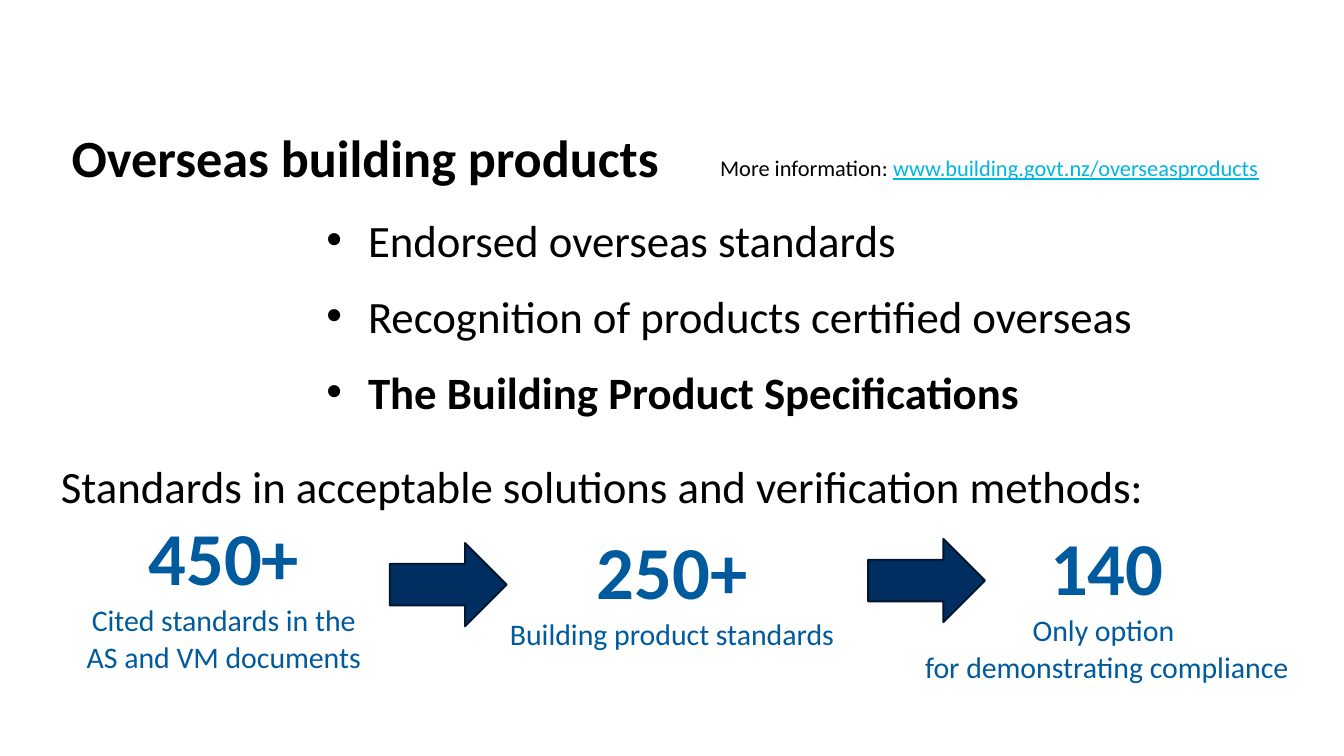
from lxml import etree
from pptx import Presentation
from pptx import util as u
from pptx.dml.color import RGBColor
from pptx.enum import shapes, text
from pptx.oxml.ns import qn

PX = 4572  # EMU in one px, 200 px to the inch
BLACK = RGBColor(0x00, 0x00, 0x00)
LINK = RGBColor(0x00, 0xB5, 0xE2)
BLUE = RGBColor(0x00, 0x5A, 0x9E)
NAVY = RGBColor(0x00, 0x2E, 0x61)
OUTLINE = RGBColor(0x00, 0x14, 0x2B)


class Slide:
    font = "Calibri"

    def __init__(self, deck):
        self.page = deck.slides.add_slide(deck.slide_layouts[6])

    def box(self, left, top, width, height, anchor=text.MSO_ANCHOR.TOP):
        box = self.page.shapes.add_textbox(*(n * PX for n in (left, top, width, height)))
        frame = box.text_frame
        frame.word_wrap = True
        frame.vertical_anchor = anchor
        return frame

    def span(self, para, words, size, color=BLACK, bold=False, underline=False):
        span = para.add_run()
        span.text = words
        font = span.font
        font.name, font.size, font.bold = self.font, u.Pt(size), bold
        font.color.rgb = color
        if underline:
            font.underline = True

    def bullets(self, frame, items, size, indent):
        for index, (words, bold) in enumerate(items):
            para = frame.add_paragraph() if index else frame.paragraphs[0]
            props = para._p.get_or_add_pPr()
            props.set("marL", str(indent * PX))
            props.set("indent", str(-indent * PX))
            etree.SubElement(props, qn("a:buFont")).set("typeface", "Arial")
            etree.SubElement(props, qn("a:buChar")).set("char", "•")
            para.space_after = u.Pt(12)
            self.span(para, words, size, bold=bold)

    def figure(self, left, top, number, lines):
        frame = self.box(left, top, 584, 268, text.MSO_ANCHOR.MIDDLE)
        value, caption = frame.paragraphs[0], frame.add_paragraph()
        for para in (value, caption):
            para.alignment = text.PP_ALIGN.CENTER
            para.line_spacing = u.Pt(20)
        self.span(value, number, 40, BLUE, bold=True)
        for index, line in enumerate(lines):
            if index:
                caption.add_line_break()
            self.span(caption, line, 16, BLUE)

    def arrow(self, left, top):
        arrow = self.page.shapes.add_shape(
            shapes.MSO_SHAPE.RIGHT_ARROW, left * PX, top * PX, 174 * PX, 124 * PX)
        arrow.shadow.inherit = False
        arrow.fill.solid()
        arrow.fill.fore_color.rgb = NAVY
        arrow.line.color.rgb = OUTLINE
        arrow.line.width = u.Pt(1)


def main():
    deck = Presentation()
    deck.slide_width, deck.slide_height = 2000 * PX, 1125 * PX
    slide = Slide(deck)

    # Title and web address
    title = slide.box(87, 186, 1880, 94, text.MSO_ANCHOR.MIDDLE)
    title.margin_right = 0
    slide.span(title.paragraphs[0], "Overseas building products", 28, bold=True)
    para = slide.box(1052, 220, 886, 60).paragraphs[0]
    slide.span(para, "More information: ", 12)
    slide.span(para, "www.building.govt.nz/overseasproducts", 12, LINK, underline=True)

    # Standards, narrowed down from left to right
    slide.figure(41, 787, "450+", ["Cited standards in the", "AS and VM documents"])
    slide.figure(708, 780, "250+", ["Building product standards"])
    slide.arrow(580, 808)
    slide.arrow(1292, 802)
    slide.figure(1355, 802, "140", ["Only option ", "for demonstrating compliance"])
    para = slide.box(71, 673, 1672, 100).paragraphs[0]
    slide.span(para, "Standards in acceptable solutions and verification methods:", 24)

    # Key topics
    slide.bullets(slide.box(466, 306, 1242, 330), [
        ("Endorsed overseas standards", False),
        ("Recognition of products certified overseas", False),
        ("The Building Product Specifications", True),
    ], 24, 62)

    deck.save("out.pptx")


if __name__ == "__main__":
    main()
